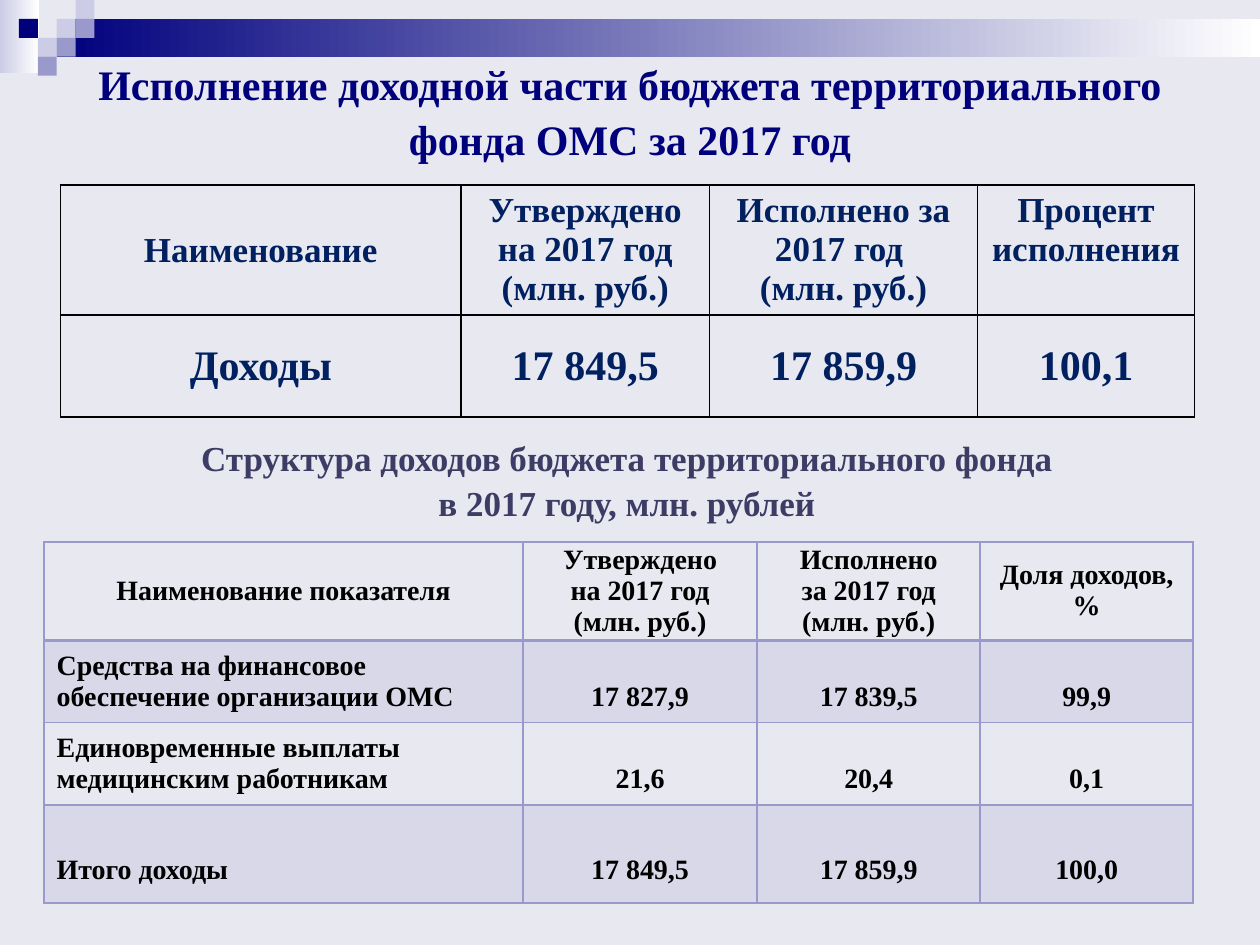
from dataclasses import dataclass

from lxml.etree import SubElement
from pptx import Presentation
from pptx.dml.color import RGBColor
from pptx.enum.shapes import MSO_SHAPE
from pptx.enum.text import MSO_ANCHOR as ANCHOR, MSO_AUTO_SIZE, PP_ALIGN as ALIGN
from pptx.oxml.ns import qn
from pptx.util import Inches, Pt


@dataclass(frozen=True)
class Theme:
    font: str = "Times New Roman"
    background: str = "E8E8F1"
    navy: str = "00007D"
    lilac: str = "9999CC"
    pale: str = "CCCCE6"
    white: str = "FFFFFF"
    black: str = "000000"
    table_text: str = "002060"
    subtitle: str = "3C3C65"
    large: int = 24
    medium: int = 20
    small: int = 16


T = Theme()
rgb = RGBColor.from_string


def write(tf, text, size, color, align=ALIGN.CENTER, spacing=None):
    tf.text = text
    tf.word_wrap = True
    for p in tf.paragraphs:
        p.alignment = align
        p.line_spacing = spacing
        p.font.name = T.font
        p.font.size = Pt(size)
        p.font.bold = True
        p.font.color.rgb = rgb(color)


def add_bar(s, x, y, w, h, *colors):
    """One colour gives a solid fill, two a left-to-right gradient."""
    sp = s.shapes.add_shape(MSO_SHAPE.RECTANGLE, *map(Inches, (x, y, w, h)))
    sp.shadow.inherit = False
    sp.line.fill.background()
    if len(colors) == 1:
        sp.fill.solid()
        sp.fill.fore_color.rgb = rgb(colors[0])
    else:
        sp.fill.gradient()
        sp.fill.gradient_angle = 0
        for stop, color, pos in zip(sp.fill.gradient_stops, colors, (0, 1)):
            stop.color.rgb = rgb(color)
            stop.position = pos


def add_decoration(s):
    add_bar(s, 0, 0, 0.31, 0.58, T.pale, T.white)
    add_bar(s, 0.45, 0.15, 9.55, 0.3, T.navy, T.white)
    step = 0.15
    squares = [(3, 1, T.pale), (4, 0, T.pale), (4, 1, T.lilac), (2, 2, T.pale),
               (1, 1, T.navy), (3, 2, T.lilac), (2, 3, T.lilac)]
    for col, row, color in squares:
        add_bar(s, col * step, row * step, step, step, color)


def set_borders(cell, color, top=1, bottom=1):
    tcPr = cell._tc.get_or_add_tcPr()
    for side, width in (("L", 1), ("R", 1), ("T", top), ("B", bottom)):
        ln = SubElement(tcPr, qn(f"a:ln{side}"), w=str(Pt(width)))
        SubElement(SubElement(ln, qn("a:solidFill")), qn("a:srgbClr"), val=color)


def set_tint(cell, color, percent):
    cell.fill.solid()
    cell.fill.fore_color.rgb = rgb(color)
    clr = cell._tc.tcPr.find(qn("a:solidFill")).find(qn("a:srgbClr"))
    SubElement(clr, qn("a:alpha"), val=str(percent * 1000))


def set_margins(cell, x, y):
    cell.margin_left = cell.margin_right = Inches(x)
    cell.margin_top = cell.margin_bottom = Inches(y)


def add_table(s, x, y, widths, heights):
    frame = s.shapes.add_table(len(heights), len(widths), Inches(x), Inches(y),
                               Inches(sum(widths)), Inches(sum(heights)))
    table = frame.table
    table.first_row = table.horz_banding = False
    for col, width in zip(table.columns, widths):
        col.width = Inches(width)
    for row, height in zip(table.rows, heights):
        row.height = Inches(height)
    return table


def cells_of(table, rows):
    for i, row in enumerate(rows):
        for j, text in enumerate(row):
            yield i, j, text, table.cell(i, j)


def add_execution_table(s):
    rows = [
        ["Наименование", "Утверждено на 2017 год\n(млн. руб.)",
         "Исполнено за 2017 год \n(млн. руб.)", "Процент исполнения"],
        ["Доходы", "17 849,5", "17 859,9", "100,1"],
    ]
    table = add_table(s, 0.48, 1.47, [3.18, 1.97, 2.13, 1.72], [1.03, 0.81])
    for i, j, text, cell in cells_of(table, rows):
        write(cell.text_frame, text, T.large if i else T.medium, T.table_text)
        cell.vertical_anchor = ANCHOR.TOP if i == 0 and j else ANCHOR.MIDDLE
        set_margins(cell, 0.05, 0.05)
        set_borders(cell, T.black)
        cell.fill.background()


def add_structure_table(s):
    rows = [
        ["Наименование показателя", "Утверждено\nна 2017 год\n(млн. руб.)",
         "Исполнено\vза 2017 год\n(млн. руб.)", "Доля доходов, %"],
        ["Средства на финансовое обеспечение организации ОМС",
         "17 827,9", "17 839,5", "99,9"],
        ["Единовременные выплаты медицинским работникам", "21,6", "20,4", "0,1"],
        ["Итого доходы", "17 849,5", "17 859,9", "100,0"],
    ]
    table = add_table(s, 0.35, 4.3, [3.8, 1.86, 1.77, 1.69], [0.78, 0.65, 0.65, 0.78])
    for i, j, text, cell in cells_of(table, rows):
        last = i == len(rows) - 1
        align = ALIGN.LEFT if i and j == 0 else ALIGN.CENTER
        write(cell.text_frame, text, T.small, T.black, align)
        cell.vertical_anchor = ANCHOR.BOTTOM if i else ANCHOR.MIDDLE
        if i:
            set_margins(cell, 0.1, 0.14 if last else 0.08)
        else:
            set_margins(cell, 0.1 if j == 3 else 0.06, 0)
        # The rule under the header is twice as thick
        set_borders(cell, T.lilac, top=2 if i == 1 else 1, bottom=1 if i else 2)
        if i % 2:
            set_tint(cell, T.lilac, 20)
        else:
            cell.fill.background()


def add_heading(sp, box, text, size, color):
    sp.left, sp.top, sp.width, sp.height = map(Inches, box)
    tf = sp.text_frame
    write(tf, text, size, color, spacing=1.08)
    tf.vertical_anchor = ANCHOR.MIDDLE
    tf.auto_size = MSO_AUTO_SIZE.NONE


def main():
    prs = Presentation()
    prs.slide_width, prs.slide_height = Inches(10), Inches(7.5)
    s = prs.slides.add_slide(prs.slide_layouts[5])
    s.background.fill.solid()
    s.background.fill.fore_color.rgb = rgb(T.background)

    # Header strip and title
    add_decoration(s)
    add_heading(s.shapes.title, (0.5, 0.5, 9, 0.73),
                "Исполнение доходной части бюджета территориального фонда ОМС за 2017 год",
                T.large, T.navy)

    # Execution of the budget
    add_execution_table(s)

    # Structure of the income
    add_heading(s.shapes.add_textbox(0, 0, 0, 0), (0.48, 3.44, 8.99, 0.71),
                "Структура доходов бюджета территориального фонда\vв 2017 году, млн. рублей",
                T.medium, T.subtitle)
    add_structure_table(s)

    prs.save("out.pptx")


if __name__ == "__main__":
    main()
